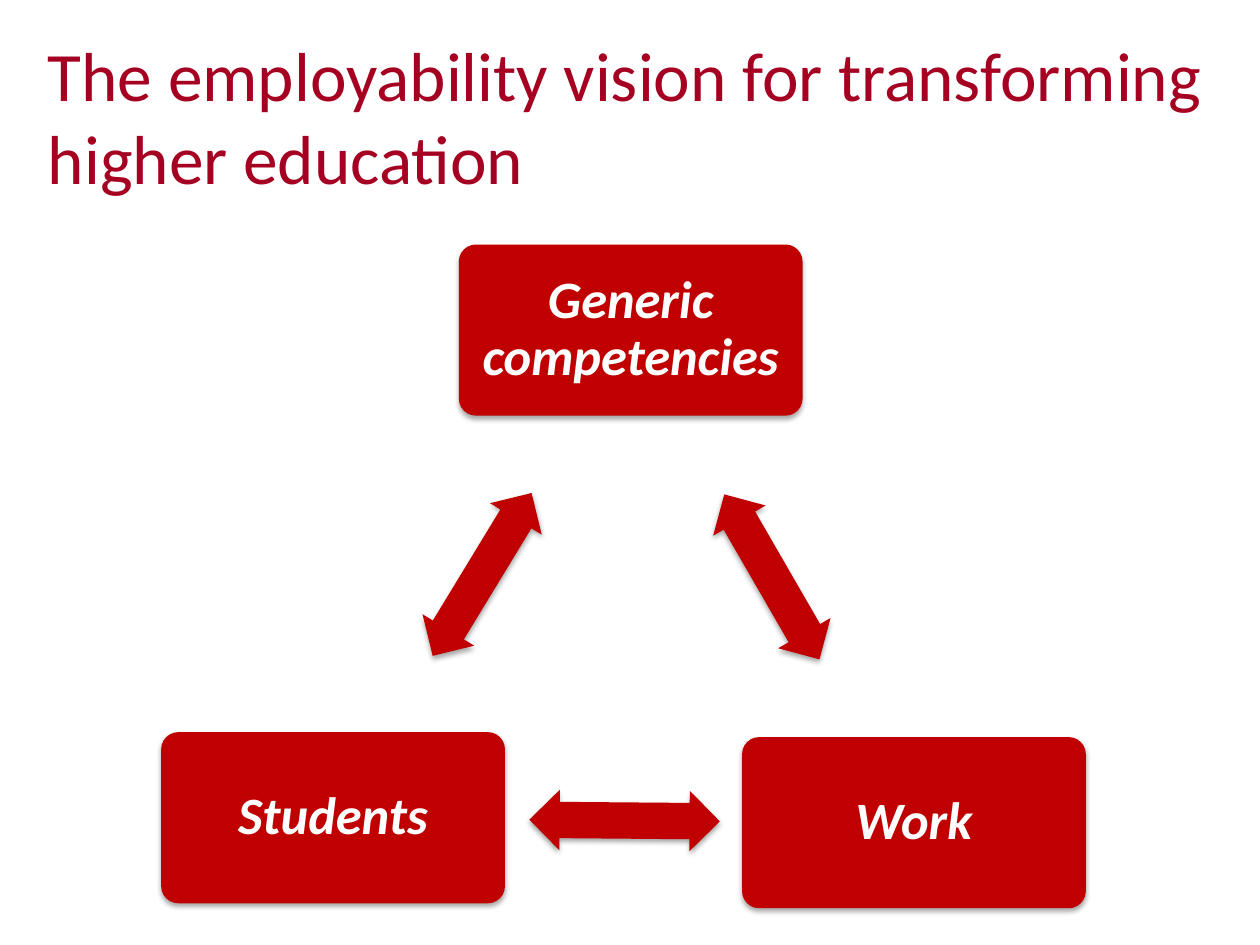
import lxml.etree
import pptx
from pptx.dml.color import RGBColor
from pptx.enum.shapes import MSO_SHAPE
from pptx.enum.text import MSO_ANCHOR, MSO_AUTO_SIZE, PP_ALIGN
from pptx.oxml.ns import qn
from pptx.util import Cm, Pt

TITLE = "The employability vision for transforming higher education"
# text, left, top in cm
BOXES = [
    ("Generic competencies", 9.25, 4.93),
    ("Work", 14.96, 14.86),
    ("Students", 3.25, 14.76),
]
# left, top in cm, rotation in degrees
ARROWS = [(13.64, 11.02, 60), (10.67, 15.93, 180.5), (7.8, 10.97, 301.3)]

BOX_SIZE = (6.93, 3.45)
ARROW_SIZE = (3.84, 1.22)
BOX_INSET = Cm(0.25)

FONT = "Calibri"
CRIMSON = RGBColor(0xA5, 0x00, 0x21)
RED = RGBColor(0xC0, 0x00, 0x00)
WHITE = RGBColor(0xFF, 0xFF, 0xFF)
SHADOW_COLOR = RGBColor(0x00, 0x00, 0x00)


def add_shadow(shape):
    """Give the shape a soft shadow that falls straight down."""
    shape.shadow.inherit = False
    effects = shape._element.spPr.find(qn("a:effectLst"))
    shadow = lxml.etree.SubElement(
        effects, qn("a:outerShdw"), blurRad=str(Pt(3.1)), dist=str(Pt(1.8)),
        dir="5400000", rotWithShape="0")
    color = lxml.etree.SubElement(shadow, qn("a:srgbClr"), val=str(SHADOW_COLOR))
    lxml.etree.SubElement(color, qn("a:alpha"), val="35000")


def add_red_shape(slide, kind, left, top, size, adjustments):
    shape = slide.shapes.add_shape(kind, Cm(left), Cm(top), *map(Cm, size))
    for index, value in enumerate(adjustments):
        shape.adjustments[index] = value
    shape.fill.solid()
    shape.fill.fore_color.rgb = RED
    shape.line.fill.background()
    add_shadow(shape)
    return shape


def add_title(slide):
    title = slide.shapes.title
    title.left, title.top, title.width, title.height = map(Cm, (0.71, 0.74, 24.13, 3.18))
    frame = title.text_frame
    frame.text = TITLE
    frame.auto_size = MSO_AUTO_SIZE.NONE
    frame.vertical_anchor = MSO_ANCHOR.MIDDLE
    paragraph = frame.paragraphs[0]
    paragraph.alignment = PP_ALIGN.LEFT
    paragraph.font.name = FONT
    paragraph.font.size = Pt(39.6)
    paragraph.font.color.rgb = CRIMSON


def add_box(slide, text, left, top):
    box = add_red_shape(slide, MSO_SHAPE.ROUNDED_RECTANGLE, left, top, BOX_SIZE, [0.1])
    frame = box.text_frame
    frame.text = text
    frame.word_wrap = True
    frame.vertical_anchor = MSO_ANCHOR.MIDDLE
    frame.margin_left = frame.margin_right = BOX_INSET
    frame.margin_top = frame.margin_bottom = BOX_INSET
    paragraph = frame.paragraphs[0]
    paragraph.alignment = PP_ALIGN.CENTER
    paragraph.line_spacing = 0.9
    font = paragraph.font
    font.name, font.size = FONT, Pt(30)
    font.bold = font.italic = True
    font.color.rgb = WHITE


def main():
    presentation = pptx.Presentation()
    presentation.slide_width, presentation.slide_height = Cm(25.4), Cm(19.05)
    slide = presentation.slides.add_slide(presentation.slide_layouts[5])
    add_title(slide)
    for text, left, top in BOXES:
        add_box(slide, text, left, top)
    for left, top, rotation in ARROWS:
        arrow = add_red_shape(
            slide, MSO_SHAPE.LEFT_RIGHT_ARROW, left, top, ARROW_SIZE, [0.6, 0.5])
        arrow.rotation = rotation
    presentation.save("out.pptx")


if __name__ == "__main__":
    main()
